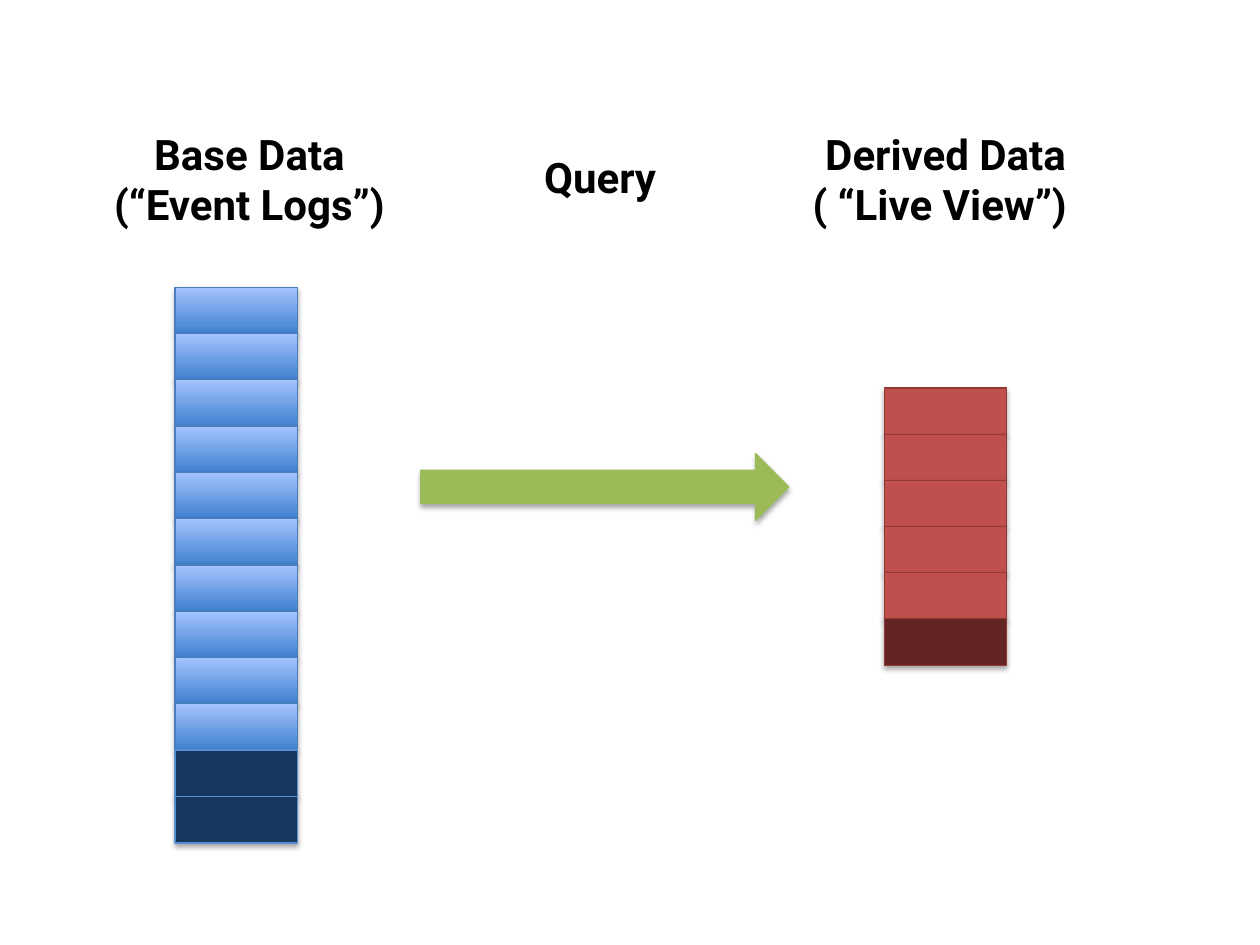
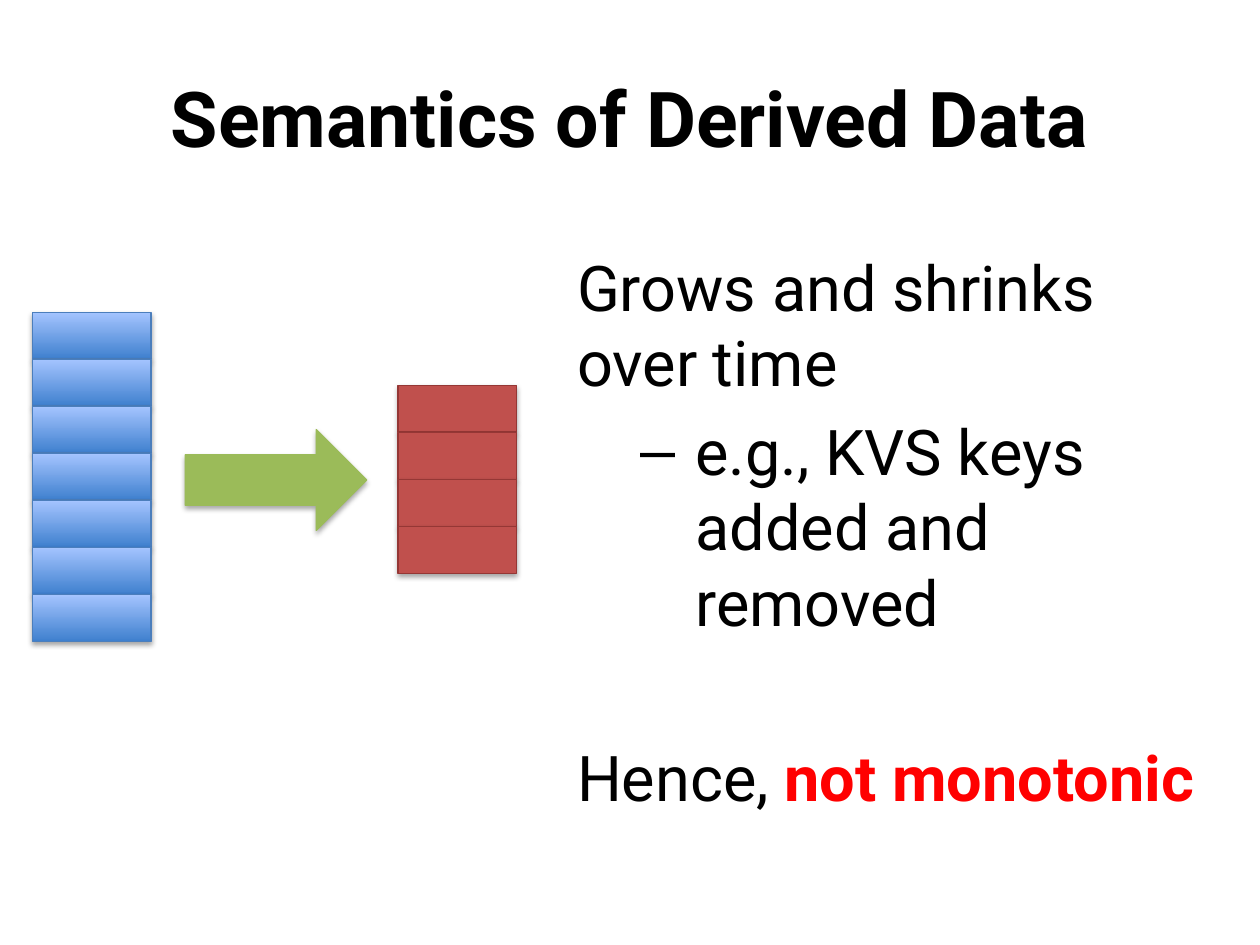
from dataclasses import dataclass

import lxml.etree
import pptx
import pptx.dml.color
import pptx.enum.shapes
import pptx.enum.text
import pptx.oxml.ns
import pptx.util

Inches, Pt = pptx.util.Inches, pptx.util.Pt
Align = pptx.enum.text.PP_ALIGN
AutoSize = pptx.enum.text.MSO_AUTO_SIZE
Shape = pptx.enum.shapes.MSO_SHAPE
qn = pptx.oxml.ns.qn


@dataclass(frozen=True)
class Theme:
    font: str = "Roboto"
    title_size: int = 44
    body_size: int = 36
    label_size: int = 24
    line_width: float = 0.75
    text: str = "000000"
    accent: str = "FF0000"
    arrow: str = "9BBB59"


THEME = Theme()
SLIDE_SIZE = (10, 7.5)
BLOCK_HEIGHT = 0.37

# Block style: (fill, line); a pair of fill colours is a bottom-to-top gradient.
BLOCK_STYLES = {
    "event": (("3F80CE", "A4C4FF"), "4B7EBC"),
    "new event": ("17375E", "558ED5"),
    "row": ("C0504D", "953735"),
    "new row": ("632523", "953735"),
}

# Each stack: left, top, width, bottom, blocks from top to bottom.
OVERVIEW_FLOW = {
    "stacks": [
        (1.39, 2.28, 0.97, 6.69, ["event"] * 10 + ["new event"] * 2),
        (7.02, 3.08, 0.97, 5.28, ["row"] * 5 + ["new row"]),
    ],
    "arrow": (3.34, 3.6, 2.92, 0.53),
}
SEMANTICS_FLOW = {
    "stacks": [
        (0.26, 2.48, 0.94, 5.09, ["event"] * 7),
        (3.16, 3.06, 0.94, 4.55, ["row"] * 4),
    ],
    "arrow": (1.47, 3.41, 1.44, 0.8),
}

# Each label: place, then lines with their alignment.
LABELS = [
    ((0.73, 0.97, 2.5, 0.91), [("Base Data", Align.CENTER), ("(“Event Logs”)", Align.CENTER)]),
    ((6.35, 0.97, 2.31, 0.91), [("Derived Data", Align.CENTER), ("( “Live View”)", Align.LEFT)]),
    ((4.22, 1.15, 1.17, 0.5), [("Query", Align.LEFT)]),
]

TITLE = "Semantics of Derived Data"
TITLE_PLACE = (0.5, 0.3, 9, 1.25)
BODY_PLACE = (4.48, 1.92, 5.42, 5.28)
GROWTH_LINES = ["Grows and shrinks", "over time"]
EXAMPLE = "e.g., KVS keys added and removed"
CONCLUSION = ["Hence, ", "not monotonic"]
CONCLUSION_GAP = 57


def rgb(value):
    return pptx.dml.color.RGBColor.from_string(value)


def inches(place):
    return [Inches(length) for length in place]


def put_at(box, place):
    box.left, box.top, box.width, box.height = inches(place)


def add_span(para, text, size, bold=False, color=THEME.text):
    span = para.add_run()
    span.text = text
    span.font.name = THEME.font
    span.font.size = Pt(size)
    span.font.bold = bold
    span.font.color.rgb = rgb(color)


def add_soft_shadow(shape):
    shape.shadow.inherit = False
    effects = shape.element.spPr.find(qn("a:effectLst"))
    shadow = lxml.etree.SubElement(
        effects, qn("a:outerShdw"), blurRad=str(Pt(3.1)), dist=str(Pt(1.8)),
        dir="5400000", rotWithShape="0")
    color = lxml.etree.SubElement(shadow, qn("a:srgbClr"), val="000000")
    lxml.etree.SubElement(color, qn("a:alpha"), val="35000")


def add_solid(shapes, kind, place, fill, line):
    """Add a shadowed shape; a pair of fill colours makes a gradient."""
    shape = shapes.add_shape(kind, *inches(place))
    if isinstance(fill, tuple):
        shape.fill.gradient()
        shape.fill.gradient_angle = 90
        for stop, color in zip(shape.fill.gradient_stops, fill):
            stop.color.rgb = rgb(color)
    else:
        shape.fill.solid()
        shape.fill.fore_color.rgb = rgb(fill)
    shape.line.color.rgb = rgb(line)
    shape.line.width = Pt(THEME.line_width)
    add_soft_shadow(shape)


def add_flow(shapes, flow):
    for left, top, width, bottom, blocks in flow["stacks"]:
        pitch = (bottom - top - BLOCK_HEIGHT) / (len(blocks) - 1)
        for row, block in enumerate(blocks):
            place = (left, top + row * pitch, width, BLOCK_HEIGHT)
            add_solid(shapes, Shape.RECTANGLE, place, *BLOCK_STYLES[block])
    add_solid(shapes, Shape.RIGHT_ARROW, flow["arrow"], THEME.arrow, THEME.arrow)


def add_label(slide, place, lines):
    frame = slide.shapes.add_textbox(*inches(place)).text_frame
    frame.word_wrap = False
    frame.auto_size = AutoSize.SHAPE_TO_FIT_TEXT
    for index, (text, alignment) in enumerate(lines):
        para = frame.add_paragraph() if index else frame.paragraphs[0]
        para.alignment = alignment
        add_span(para, text, THEME.label_size, bold=True)


def set_bullet(para, margin, indent, mark=None):
    properties = para._p.get_or_add_pPr()
    properties.set("marL", str(Inches(margin)))
    properties.set("indent", str(Inches(indent)))
    if mark:
        lxml.etree.SubElement(properties, qn("a:buChar"), char=mark)
    else:
        lxml.etree.SubElement(properties, qn("a:buNone"))


def fill_body(body):
    put_at(body, BODY_PLACE)
    frame = body.text_frame
    frame.word_wrap = True
    frame.auto_size = AutoSize.NONE

    growth = frame.paragraphs[0]
    for index, line in enumerate(GROWTH_LINES):
        if index:
            growth.add_line_break()
        add_span(growth, line, THEME.body_size)
    set_bullet(growth, 0, 0)

    example = frame.add_paragraph()
    example.level = 1
    add_span(example, EXAMPLE, THEME.body_size)
    set_bullet(example, 0.94, -0.44, "–")

    conclusion = frame.add_paragraph()
    conclusion.space_before = Pt(CONCLUSION_GAP)
    lead, verdict = CONCLUSION
    add_span(conclusion, lead, THEME.body_size)
    add_span(conclusion, verdict, THEME.body_size, bold=True, color=THEME.accent)
    set_bullet(conclusion, 0, 0)


def build_overview(deck):
    slide = deck.slides.add_slide(deck.slide_layouts.get_by_name("Blank"))
    add_flow(slide.shapes, OVERVIEW_FLOW)
    for place, lines in LABELS:
        add_label(slide, place, lines)


def build_semantics(deck):
    slide = deck.slides.add_slide(deck.slide_layouts.get_by_name("Title and Content"))
    title = slide.shapes.title
    put_at(title, TITLE_PLACE)
    title.text_frame.vertical_anchor = pptx.enum.text.MSO_ANCHOR.MIDDLE
    heading = title.text_frame.paragraphs[0]
    heading.alignment = Align.CENTER
    add_span(heading, TITLE, THEME.title_size, bold=True)
    fill_body(slide.placeholders[1])
    add_flow(slide.shapes.add_group_shape().shapes, SEMANTICS_FLOW)


def main():
    deck = pptx.Presentation()
    deck.slide_width, deck.slide_height = inches(SLIDE_SIZE)
    build_overview(deck)
    build_semantics(deck)
    deck.save("out.pptx")


if __name__ == "__main__":
    main()
